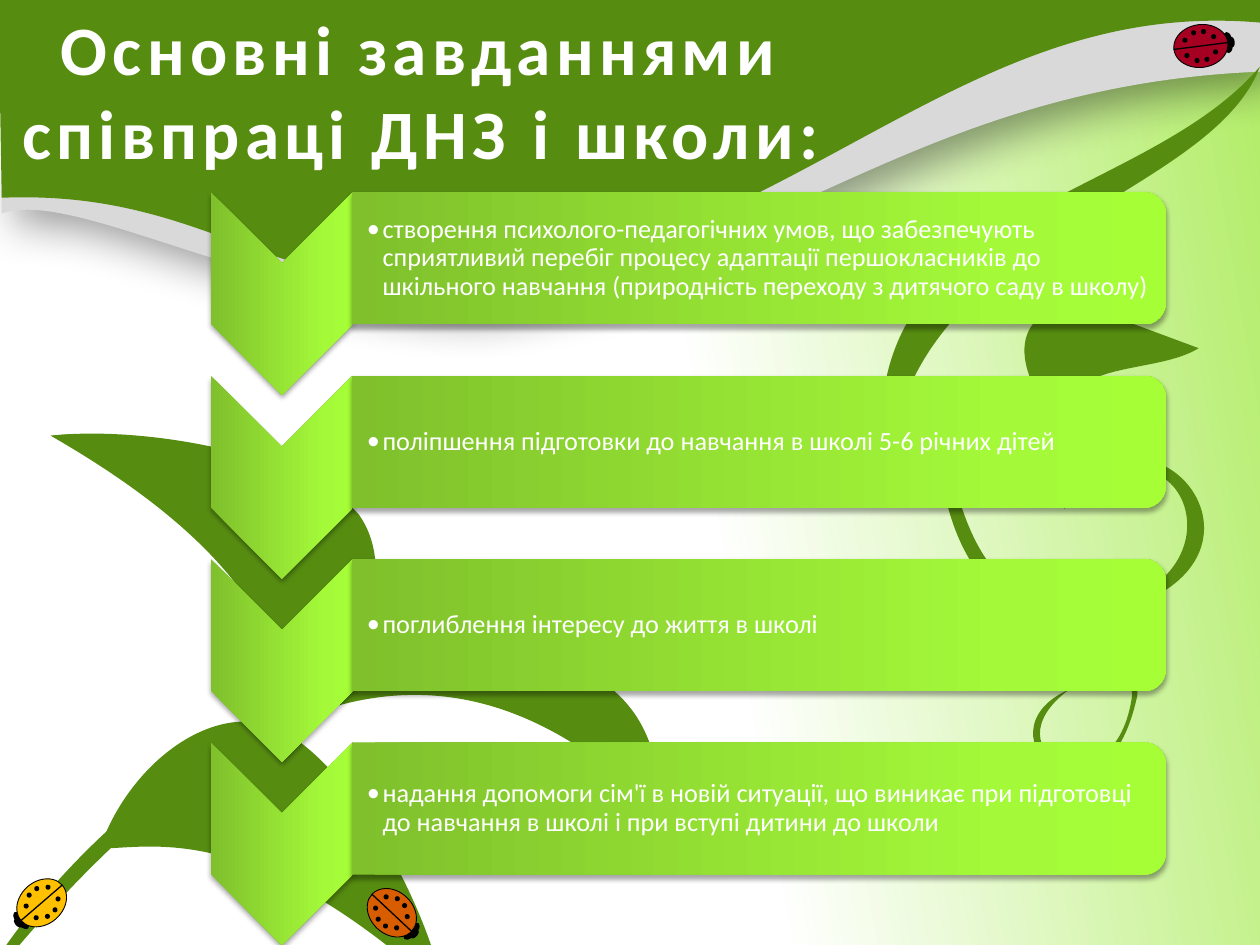
from copy import deepcopy
from math import cos, radians, sin

from lxml import etree
from pptx import Presentation
from pptx.dml.color import RGBColor
from pptx.enum.shapes import MSO_CONNECTOR, MSO_SHAPE
from pptx.enum.text import MSO_ANCHOR, PP_ALIGN
from pptx.oxml.ns import qn
from pptx.util import Pt

OVAL, CHEVRON, BAR = MSO_SHAPE.OVAL, MSO_SHAPE.CHEVRON, MSO_SHAPE.ROUND_2_SAME_RECTANGLE
LINE = MSO_CONNECTOR.STRAIGHT
MIDDLE, CENTER, LEFT = MSO_ANCHOR.MIDDLE, PP_ALIGN.CENTER, PP_ALIGN.LEFT

TITLE = "Основні завданнями співпраці ДНЗ і школи:"
TASKS = [
    "створення психолого-педагогічних умов, що забезпечують сприятливий перебіг процесу "
    "адаптації першокласників до шкільного навчання (природність переходу з дитячого саду в школу)",
    "поліпшення підготовки до навчання в школі 5-6 річних дітей",
    "поглиблення інтересу до життя в школі",
    "надання допомоги сім'ї в новій ситуації, що виникає при підготовці "
    "до навчання в школі і при вступі дитини до школи",
]

THEME = {
    "font": "Calibri", "title": 39.6, "body": 15,
    "white": "FFFFFF", "black": "000000", "leaf": "568D11", "gray": "D9D9D9",
    "page": [(55, "FFFFFF"), (99, "B3ED6A")],
    "lime": [(0, "7FC02C"), (80, "A4F939"), (100, "A6FE36")],
}

WAVE = [(1, 122), (1, 92), (720, -2), (720, 41), (520, 49, 436, 156, 270, 174),
        (153, 176, 44, 107, 1, 122)]
LEAVES = [
    [(721, 13), (723, -1), (603, -3, 120, -19, -1, 0), (1, 113),
     (151, 107, 171, 210, 377, 136), (505, 84, 588, 1, 721, 13)],
    [(720, 38), (649, 121, 473, 117, 508, 287), (502, 136, 690, 118, 720, 38)],
    [(606, 244), (608, 204, 659, 215, 685, 199), (623, 176), (593, 170, 565, 194, 606, 244)],
    [(536, 235), (546, 271, 549, 336, 608, 350), (724, 345, 677, 218, 608, 291),
     (658, 205, 760, 338, 608, 355), (555, 350, 534, 293, 536, 235)],
    [(580, 347), (601, 356, 642, 361, 647, 397), (638, 467, 561, 431, 611, 394),
     (554, 419, 631, 488, 650, 397), (650, 365, 616, 349, 580, 347)],
    [(169, 410), (159, 378, 156, 322, 29, 249), (81, 243, 174, 259, 205, 294),
     (228, 326, 208, 382, 169, 410)],
    [(169, 410), (214, 345, 168, 263, 29, 249), (81, 243, 141, 270, 172, 305),
     (194, 338, 208, 382, 169, 410)],
    [(57, 485), (91, 484, 146, 470, 254, 568), (244, 516, 199, 433, 156, 415),
     (119, 402, 73, 438, 57, 485)],
    [(57, 485), (106, 422, 198, 440, 254, 568), (244, 516, 199, 468, 156, 449),
     (119, 438, 73, 438, 57, 485)],
    [(377, 464), (278, 369, 158, 350, -19, 577), (30, 483, 138, 402, 225, 377),
     (298, 363, 379, 374, 377, 464)],
]

BUGS = [(223.9, 521.6, 133.1, "D85C00"), (23.8, 515.9, 229.3, "FFC000"),
        (686.2, 26.3, 82.8, "A50021")]
SPOTS = [(side * x, y) for side in (-1, 1)
         for x, y in ((4.4, -7.9), (8, -2.5), (8, 3.2), (4.4, 8.6))]
TOP, STEP, BAR_H, BAR_W = 109.8, 104.8, 75.6, 465
CHEV_X, CHEV_W, CHEV_H = 120.4, 81.4, 116
BAR_X, TEXT_H = 201.2, 67.7


def rgb(code):
    return RGBColor.from_string(code)


def assign(item, values):
    for name, value in values.items():
        setattr(item, name, value)


def blend(fill, root, stops, angle):
    fill.gradient()
    fill.gradient_angle = angle
    track = root.xpath(".//a:gsLst")[0]
    while len(track) < len(stops):
        track.append(deepcopy(track[0]))
    for stop, (place, code) in zip(fill.gradient_stops, stops):
        stop.color.rgb = rgb(code)
        stop.position = place / 100


def shade(shape, alpha, blur, dist, angle):
    glow = etree.SubElement(shape._element.spPr.find(qn("a:effectLst")), qn("a:outerShdw"),
                            blurRad=str(Pt(blur)), dist=str(Pt(dist)),
                            dir=str(angle * 60000), algn="tl", rotWithShape="0")
    tint = etree.SubElement(glow, qn("a:srgbClr"), val=THEME["black"])
    etree.SubElement(tint, qn("a:alpha"), val=str(alpha * 1000))


def plain(shape, code=None):
    shape.shadow.inherit = False
    shape.line.fill.background()
    if code:
        shape.fill.solid()
        shape.fill.fore_color.rgb = rgb(code)
    return shape


def bounds(parts, steps=24):
    dots = [parts[0]]
    for part in parts[1:]:
        nodes = [dots[-1], part[:2], part[-4:-2] or part, part[-2:]]
        for i in range(1, steps + 1):
            t = i / steps
            mix = ((1 - t) ** 3, 3 * t * (1 - t) ** 2, 3 * t * t * (1 - t), t ** 3)
            dots.append(tuple(sum(m * n[k] for m, n in zip(mix, nodes)) for k in (0, 1)))
    xs, ys = zip(*dots)
    return [Pt(v) for v in (min(xs), min(ys), max(xs), max(ys))]


def outline(shapes, parts, code):
    x, y, right, low = bounds(parts)
    pen = shapes.build_freeform(x, y)
    pen.add_line_segments([(right, y), (right, low), (x, low)], close=True)
    shape = pen.convert_to_shape()
    trail = shape._element.xpath(".//a:path")[0]
    for step in list(trail):
        trail.remove(step)
    for i, part in enumerate(parts):
        tag = "a:moveTo" if i == 0 else "a:lnTo" if len(part) == 2 else "a:cubicBezTo"
        step = etree.SubElement(trail, qn(tag))
        for px, py in zip(part[::2], part[1::2]):
            etree.SubElement(step, qn("a:pt"), x=str(Pt(px) - x), y=str(Pt(py) - y))
    etree.SubElement(trail, qn("a:close"))
    return plain(shape, code)


def turned(shapes, kind, x, y, w, h, angle, code=None):
    shape = shapes.add_shape(kind, Pt(x - w / 2), Pt(y - h / 2), Pt(w), Pt(h))
    shape.rotation = angle
    return plain(shape, code)


def draw_bug(shapes, x, y, angle, code):
    kit = shapes.add_group_shape().shapes
    c, s = cos(radians(angle)), sin(radians(angle))

    def spin(dx, dy):
        return x + dx * c - dy * s, y + dx * s + dy * c

    def oval(dx, dy, w, h, tone=THEME["black"]):
        return turned(kit, OVAL, *spin(dx, dy), w, h, angle, tone)

    oval(0, -15.4, 12.2, 5.8)
    body = oval(0, 0, 24.5, 31, code)
    seam = kit.add_connector(LINE, *[Pt(v) for v in spin(0, -15.4) + spin(0, 15.6)])
    for item, width in ((body, 0.5), (seam, 0.75)):
        item.line.color.rgb = rgb(THEME["black"])
        item.line.width = Pt(width)
    etree.SubElement(seam._element.spPr, qn("a:effectLst"))
    oval(0, -18, 5.8, 2.9)
    for dx, dy in SPOTS:
        oval(dx, dy, 2.9, 2.9)


def write(shape, text, size, frame, para, bold=False):
    assign(shape.text_frame, frame)
    line = shape.text_frame.paragraphs[0]
    assign(line, para)
    run = line.add_run()
    run.text = text
    assign(run.font, {"name": THEME["font"], "size": Pt(size), "bold": bold})
    run.font.color.rgb = rgb(THEME["white"])
    return line, run


def draw_task(shapes, top, text):
    mid = top + BAR_H / 2
    for kind, x, y, w, h in (
            (CHEVRON, CHEV_X + CHEV_W / 2, top + CHEV_H / 2, CHEV_H, CHEV_W),
            (BAR, BAR_X + BAR_W / 2, mid, BAR_H, BAR_W)):
        shape = turned(shapes, kind, x, y, w, h, 90)
        blend(shape.fill, shape._element, THEME["lime"], 90)
        shade(shape, 35, 3.1, 1.8, 90)
    box = shapes.add_textbox(Pt(BAR_X), Pt(mid - TEXT_H / 2), Pt(461.5), Pt(TEXT_H))
    frame = {"word_wrap": True, "vertical_anchor": MIDDLE, "margin_left": Pt(8.4),
             "margin_top": Pt(0.7), "margin_right": Pt(0.7), "margin_bottom": Pt(0.7)}
    line, _ = write(box, text, THEME["body"], frame, {"line_spacing": 0.9, "alignment": LEFT})
    props = line._p.get_or_add_pPr()
    props.set("marL", str(Pt(9)))
    props.set("indent", str(Pt(-9)))
    etree.SubElement(props, qn("a:buFont"), typeface=THEME["font"])
    etree.SubElement(props, qn("a:buChar"), char="•")


def main():
    deck = Presentation()
    assign(deck, {"slide_width": Pt(720), "slide_height": Pt(540)})
    slide = deck.slides.add_slide(deck.slide_layouts[5])
    shapes = slide.shapes
    blend(slide.background.fill, slide._element, THEME["page"], 10)
    shade(outline(shapes, WAVE, THEME["gray"]), 40, 25, 12, 45)
    for leaf in LEAVES:
        outline(shapes, leaf, THEME["leaf"])
    for bug in BUGS:
        draw_bug(shapes, *bug)
    title = shapes.title
    shapes._spTree.append(title._element)
    assign(title, {"left": Pt(2), "top": Pt(3.6), "width": Pt(477.4), "height": Pt(95.5)})
    frame = {"word_wrap": True, "vertical_anchor": MIDDLE,
             "margin_left": Pt(4), "margin_right": Pt(4)}
    _, run = write(title, TITLE, THEME["title"], frame, {"alignment": CENTER}, True)
    run.font._element.set("spc", "300")
    for i, task in enumerate(TASKS):
        draw_task(shapes, TOP + i * STEP, task)
    deck.save("out.pptx")


if __name__ == "__main__":
    main()
